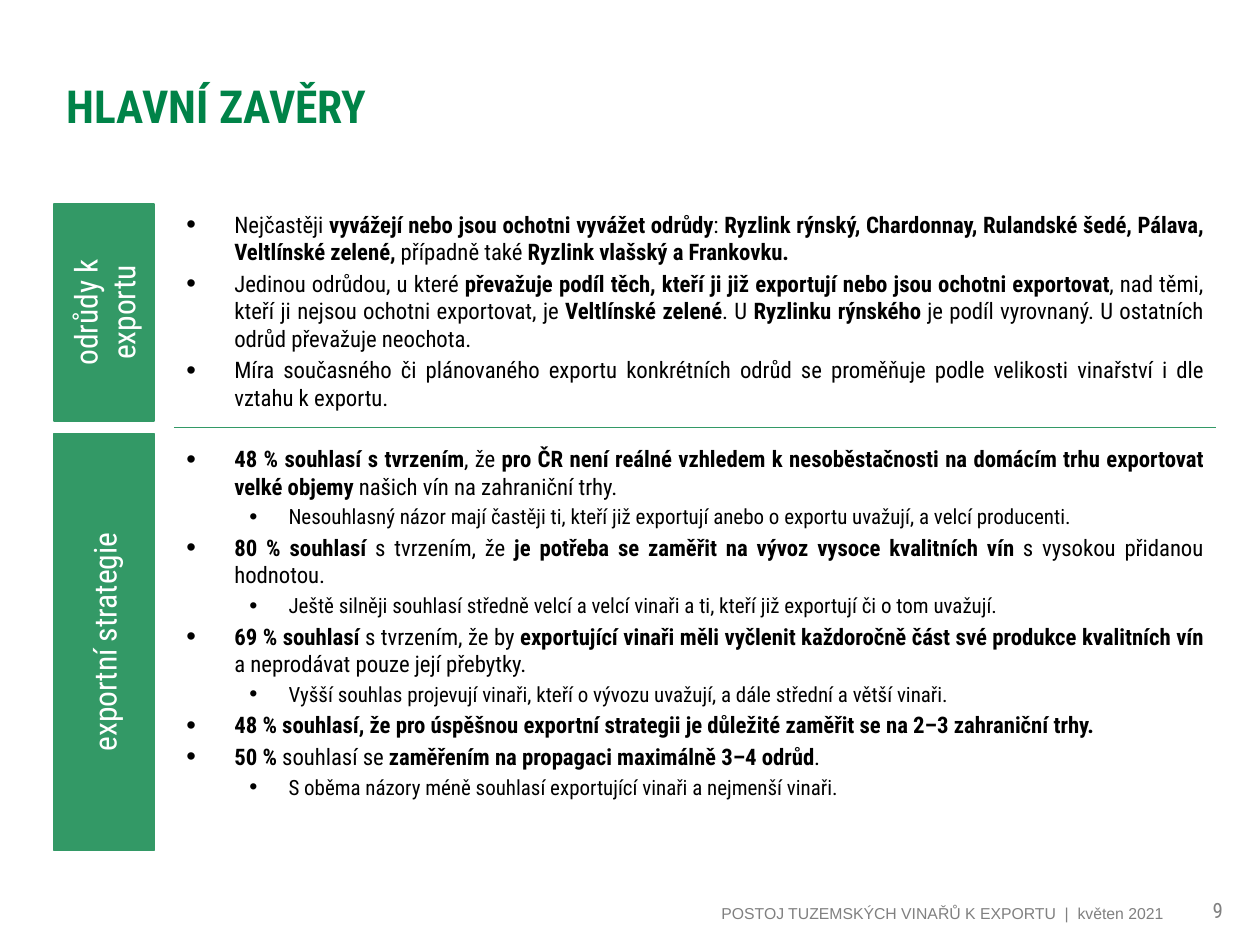
from dataclasses import dataclass

from lxml import etree
from pptx import Presentation
from pptx.dml.color import RGBColor
from pptx.enum import shapes, text
from pptx.oxml import ns
from pptx.util import Inches, Pt


@dataclass(frozen=True)
class Theme:
    title: str = "008348"
    accent: str = "339966"
    body: str = "000000"
    footer: str = "808080"
    label: str = "FFFFFF"
    font: str = "Roboto Condensed"
    footer_font: str = "Arial"
    title_size: int = 26
    label_size: int = 18
    point_size: int = 13
    detail_size: int = 12
    footer_size: int = 9


theme = Theme()
ALIGN = text.PP_ALIGN
ANCHOR = text.MSO_ANCHOR


def write(frame, wording, size, color, font=theme.font, bold=False,
          align=ALIGN.LEFT, anchor=ANCHOR.MIDDLE, new=False, level=0,
          before=0, indent=None, bullet_size=None):
    """Write one paragraph; parts between ** marks are bold."""
    frame.word_wrap = True
    frame.auto_size = text.MSO_AUTO_SIZE.NONE
    frame.vertical_anchor = anchor
    paragraph = frame.add_paragraph() if new else frame.paragraphs[0]
    paragraph.level = level
    paragraph.alignment = align
    paragraph.space_before = Pt(before)
    if indent:
        left, hanging = indent
        props = paragraph._p.get_or_add_pPr()
        props.set("marL", str(Inches(left)))
        props.set("indent", str(Inches(-hanging)))
        etree.SubElement(props, ns.qn("a:buSzPct")).set("val", str(bullet_size * 1000))
        etree.SubElement(props, ns.qn("a:buFont")).set("typeface", "Arial")
        etree.SubElement(props, ns.qn("a:buChar")).set("char", "•")
    for number, part in enumerate(wording.split("**")):
        if part:
            run = paragraph.add_run()
            run.text = part
            run.font.name = font
            run.font.size = Pt(size)
            run.font.bold = bold or number % 2 == 1
            run.font.color.rgb = RGBColor.from_string(color)


prs = Presentation()
prs.slide_width, prs.slide_height = Inches(10), Inches(7.5)
slide = prs.slides.add_slide(prs.slide_layouts[1])

# Title
title = slide.shapes.title
title.left, title.top = Inches(0.43), Inches(0.21)
title.width, title.height = Inches(7.17), Inches(1.25)
write(title.text_frame, "HLAVNÍ ZAVĚRY", theme.title_size, theme.title, bold=True)

# Conclusions: level, space before, wording
conclusions = [
    (0, 0, "Nejčastěji **vyvážejí nebo jsou ochotni vyvážet odrůdy**: **Ryzlink rýnský, "
           "Chardonnay, Rulandské šedé, Pálava, Veltlínské zelené, **případně také "
           "**Ryzlink vlašský a Frankovku.**"),
    (0, 2.6, "Jedinou odrůdou, u které **převažuje podíl těch, kteří ji již exportují nebo "
             "jsou ochotni exportovat**, nad těmi, kteří ji nejsou ochotni exportovat, je "
             "**Veltlínské zelené**. U **Ryzlinku rýnského** je podíl vyrovnaný. "
             "U ostatních odrůd převažuje neochota."),
    (0, 2.6, "Míra současného či plánovaného exportu konkrétních odrůd se proměňuje podle "
             "velikosti vinařství i dle vztahu k exportu."),
    (0, 19.5, "**48 % souhlasí s tvrzením**, že **pro ČR není reálné vzhledem "
              "k nesoběstačnosti na domácím trhu exportovat velké objemy **našich vín na "
              "zahraniční trhy."),
    (1, 2.4, "Nesouhlasný názor mají častěji ti, kteří již exportují anebo o exportu "
             "uvažují, a velcí producenti."),
    (0, 2.6, "**80 % souhlasí **s tvrzením, že **je potřeba se zaměřit na vývoz vysoce "
             "kvalitních vín** s vysokou přidanou hodnotou."),
    (1, 2.4, "Ještě silněji souhlasí středně velcí a velcí vinaři a ti, kteří již exportují "
             "či o tom uvažují."),
    (0, 2.6, "**69 % souhlasí **s tvrzením, že by **exportující vinaři měli vyčlenit "
             "každoročně část své produkce kvalitních vín **a neprodávat pouze její "
             "přebytky."),
    (1, 2.4, "Vyšší souhlas projevují vinaři, kteří o vývozu uvažují, a dále střední "
             "a větší vinaři."),
    (0, 2.6, "**48 % souhlasí, že pro úspěšnou exportní strategii je důležité zaměřit se na "
             "2–3 zahraniční trhy.**"),
    (0, 2.6, "**50 %** souhlasí se **zaměřením na propagaci maximálně 3–4 odrůd**."),
    (1, 2.4, "S oběma názory méně souhlasí exportující vinaři a nejmenší vinaři."),
]
levels = [
    dict(size=theme.point_size, indent=(0.38, 0.38), bullet_size=120),
    dict(size=theme.detail_size, indent=(0.81, 0.31), bullet_size=110),
]
body = slide.placeholders[1]
body.left, body.top = Inches(1.38), Inches(1.62)
body.width, body.height = Inches(8.27), Inches(5.21)
for number, (level, before, wording) in enumerate(conclusions):
    write(body.text_frame, wording, color=theme.body, align=ALIGN.JUSTIFY,
          anchor=ANCHOR.TOP, new=number > 0, level=level, before=before, **levels[level])

# Section labels, read from bottom to top
for top, height, wording in [(1.62, 1.72, "odrůdy k exportu"),
                             (3.44, 3.31, "exportní strategie")]:
    section = slide.shapes.add_shape(shapes.MSO_SHAPE.RECTANGLE, Inches(0.43), Inches(top),
                                     Inches(0.79), Inches(height))
    section.shadow.inherit = False
    section.fill.solid()
    section.fill.fore_color.rgb = RGBColor.from_string(theme.accent)
    section.line.color.rgb = RGBColor.from_string(theme.accent)
    section.line.width = Pt(1)
    write(section.text_frame, wording, theme.label_size, theme.label, align=ALIGN.CENTER)
    section.text_frame._txBody.bodyPr.set("vert", "vert270")

# Divider between the sections
divider = slide.shapes.add_connector(shapes.MSO_CONNECTOR.STRAIGHT, Inches(1.38),
                                     Inches(3.39), Inches(9.65), Inches(3.39))
divider.line.color.rgb = RGBColor.from_string(theme.accent)
divider.line.width = Pt(0.5)
etree.SubElement(divider._element.spPr, ns.qn("a:effectLst"))

# Footer and page number
for left, width, wording, size, font, align in [
    (0.49, 8.84, "POSTOJ TUZEMSKÝCH VINAŘŮ K EXPORTU  |  květen 2021",
     theme.footer_size, theme.footer_font, ALIGN.RIGHT),
    (9.33, 0.67, "9", theme.detail_size, theme.font, ALIGN.CENTER),
]:
    footer = slide.shapes.add_textbox(Inches(left), Inches(6.98), Inches(width), Inches(0.39))
    write(footer.text_frame, wording, size, theme.footer, font=font, align=align,
          anchor=ANCHOR.BOTTOM)

prs.save("out.pptx")
